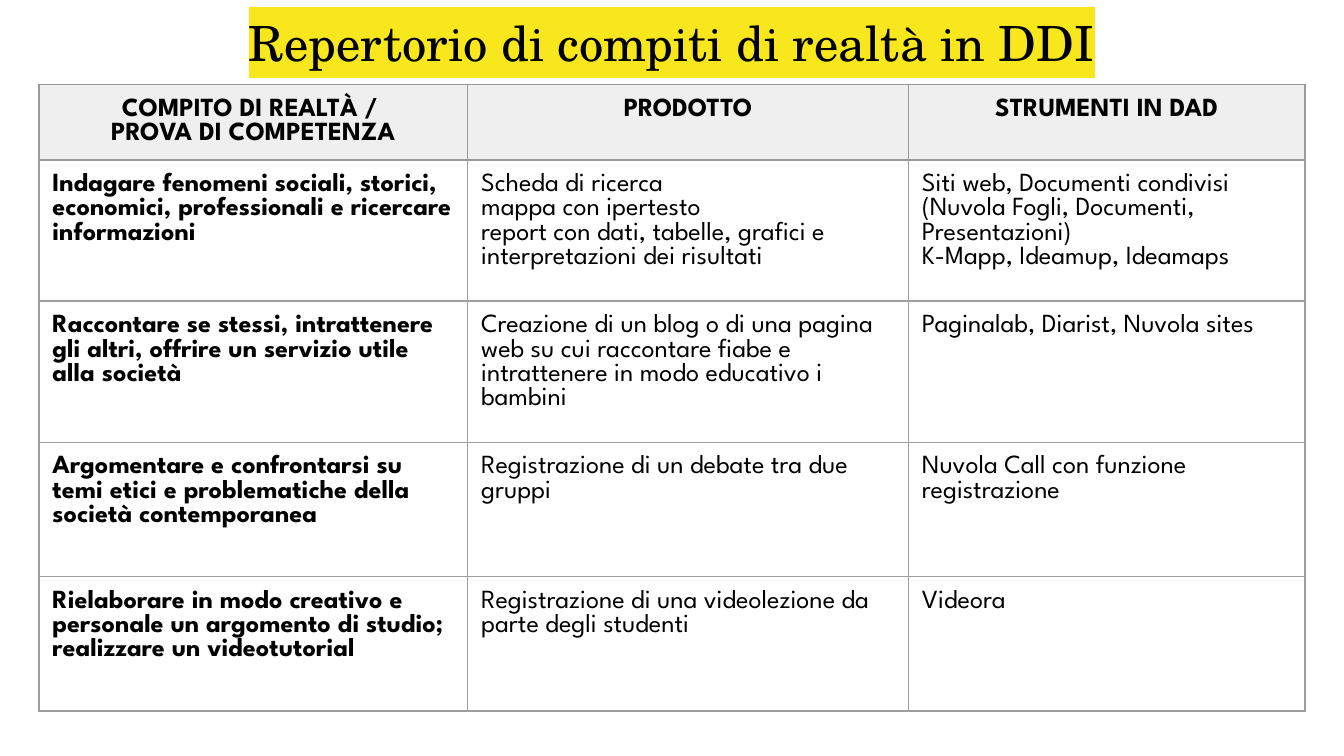
from lxml.etree import SubElement
from pptx import Presentation
from pptx.dml.color import RGBColor
from pptx.enum.text import MSO_ANCHOR, MSO_AUTO_SIZE, PP_ALIGN
from pptx.oxml.ns import qn
from pptx.util import Inches, Pt

TITLE = "Repertorio di compiti di realtà in DDI"
ROWS = [
    ("COMPITO DI REALTÀ / \nPROVA DI COMPETENZA", "PRODOTTO", "STRUMENTI IN DAD"),
    ("Indagare fenomeni sociali, storici, economici, professionali e ricercare informazioni",
     "Scheda di ricerca\nmappa con ipertesto\n"
     "report con dati, tabelle, grafici e interpretazioni dei risultati",
     "Siti web, Documenti condivisi (Nuvola Fogli, Documenti, Presentazioni)\n"
     "K-Mapp, Ideamup, Ideamaps"),
    ("Raccontare se stessi, intrattenere gli altri, offrire un servizio utile alla società",
     "Creazione di un blog o di una pagina web su cui raccontare fiabe e "
     "intrattenere in modo educativo i bambini",
     "Paginalab, Diarist, Nuvola sites"),
    ("Argomentare e confrontarsi su temi etici e problematiche della società contemporanea",
     "Registrazione di un debate tra due gruppi",
     "Nuvola Call con funzione registrazione"),
    ("Rielaborare in modo creativo e personale un argomento di studio; "
     "realizzare un videotutorial",
     "Registrazione di una videolezione da parte degli studenti",
     "Videora"),
]
COLORS = {"text": "000000", "highlight": "F8E71C", "header": "EFEFEF",
          "header_line": "999999", "line": "9E9E9E"}
SLIDE_WIDTH = Inches(10)
SLIDE_HEIGHT = SLIDE_WIDTH * 9 // 16
COL_WIDTHS = [3.19, 3.28, 2.95]
ROW_HEIGHTS = [0.42, 1.05, 1.05, 1, 1]
TABLE_LEFT, TABLE_TOP = 0.29, 0.63
TITLE_FONT = {"name": "TeX Gyre Schola", "size": Pt(26), "bold": False}
CELL_FONT = {"name": "League Spartan", "size": Pt(14)}
MARGINS = {f"margin_{side}": Inches(0.1) for side in ("left", "top", "right", "bottom")}


def set_all(obj, values):
    for name, value in values.items():
        setattr(obj, name, value)


def add_text(p, text, font):
    r = p.add_run()
    r.text = text
    set_all(r.font, font)
    r.font.color.rgb = RGBColor.from_string(COLORS["text"])
    return r


def add_color(parent, tag, color):
    el = SubElement(parent, qn(tag))
    SubElement(el, qn("a:srgbClr"), val=color)
    return el


def add_borders(cell, top, other):
    tc_pr = cell._tc.get_or_add_tcPr()
    for side in "LRTB":
        ln = SubElement(tc_pr, qn(f"a:ln{side}"), w=str(Pt(0.75)))
        add_color(ln, "a:solidFill", top if side == "T" else other)


def fill_cell(cell, text, row, col):
    header = row == 0
    set_all(cell, MARGINS)
    add_borders(cell, COLORS["header_line" if row < 2 else "line"],
                COLORS["header_line" if header else "line"])
    if header:
        cell.fill.solid()
        cell.fill.fore_color.rgb = RGBColor.from_string(COLORS["header"])
    else:
        cell.fill.background()
    tf = cell.text_frame
    for i, line in enumerate(text.split("\n")):
        p = tf.add_paragraph() if i else tf.paragraphs[0]
        p.alignment = PP_ALIGN.CENTER if header else PP_ALIGN.LEFT
        add_text(p, line, {**CELL_FONT, "bold": header or col == 0})


def add_title(s):
    title = s.shapes.title
    set_all(title, {"left": Inches(0.34), "top": 0,
                    "width": Inches(9.32), "height": Inches(0.63)})
    tf = title.text_frame
    set_all(tf, {**MARGINS, "word_wrap": True, "auto_size": MSO_AUTO_SIZE.NONE,
                 "vertical_anchor": MSO_ANCHOR.MIDDLE})
    p = tf.paragraphs[0]
    p.alignment = PP_ALIGN.CENTER
    r_pr = add_text(p, TITLE, TITLE_FONT)._r.get_or_add_rPr()
    highlight = add_color(r_pr, "a:highlight", COLORS["highlight"])
    r_pr.find(qn("a:latin")).addprevious(highlight)


def add_tasks_table(s):
    frame = s.shapes.add_table(len(ROWS), len(COL_WIDTHS), Inches(TABLE_LEFT), Inches(TABLE_TOP),
                               Inches(sum(COL_WIDTHS)), Inches(sum(ROW_HEIGHTS)))
    table = frame.table
    table.horz_banding = False
    for column, width in zip(table.columns, COL_WIDTHS):
        column.width = Inches(width)
    for row, height in zip(table.rows, ROW_HEIGHTS):
        row.height = Inches(height)
    for row, texts in enumerate(ROWS):
        for col, text in enumerate(texts):
            fill_cell(table.cell(row, col), text, row, col)


def main():
    prs = Presentation()
    prs.slide_width, prs.slide_height = SLIDE_WIDTH, SLIDE_HEIGHT
    s = prs.slides.add_slide(prs.slide_layouts[5])
    add_title(s)
    add_tasks_table(s)
    prs.save("out.pptx")


if __name__ == "__main__":
    main()
